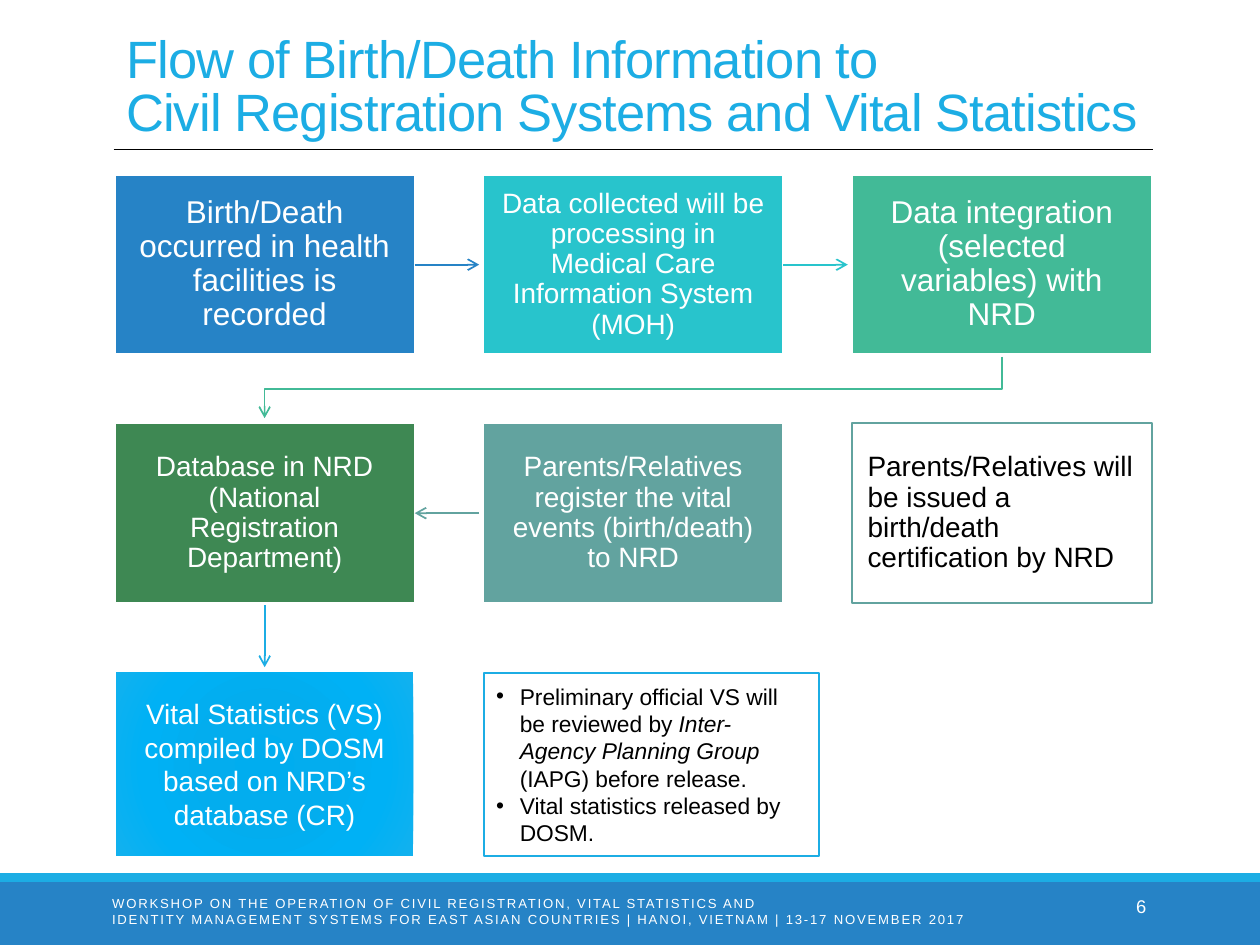
from dataclasses import dataclass
from itertools import pairwise

from lxml.etree import SubElement
from pptx import Presentation
from pptx.dml.color import RGBColor
from pptx.enum.shapes import MSO_CONNECTOR as Link, MSO_SHAPE as Shape
from pptx.enum.text import MSO_ANCHOR as Anchor, MSO_AUTO_SIZE as AutoSize, PP_ALIGN as Align
from pptx.oxml.ns import qn
from pptx.util import Cm, Pt


@dataclass(frozen=True)
class Theme:
    font: str = "Arial"
    white: str = "FFFFFF"
    black: str = "000000"
    sky: str = "1CADE4"
    blue: str = "2683C6"
    aqua: str = "28C4CC"
    mint: str = "42BA97"
    green: str = "3E8853"
    teal: str = "62A39F"
    glow: tuple = ((0, "00ADEF"), (34, "03ADEE"), (70, "00B1F5"), (100, "12B1EE"))
    title: float = 30
    large: float = 18
    body: float = 16
    note: float = 13
    number: float = 10.5
    footer: float = 7.5
    border: float = 1.25
    arrow: float = 1
    rule: float = 0.75


@dataclass(frozen=True)
class Box:
    """A rectangle in centimetres."""
    left: float
    top: float
    width: float
    height: float

    @property
    def right(self):
        return self.left + self.width

    @property
    def bottom(self):
        return self.top + self.height

    @property
    def center(self):
        return self.left + self.width / 2

    @property
    def middle(self):
        return self.top + self.height / 2

    def lengths(self):
        return [Cm(value) for value in (self.left, self.top, self.width, self.height)]


THEME = Theme()
GAP = 1.38
REACH = 1.3  # length of an arrow between neighbouring boxes


def rgb(color):
    return RGBColor.from_string(color)


def style(para, size, color, align=Align.LEFT, tracking=None, spacing=None):
    font = para.font
    font.name, font.size, font.color.rgb = THEME.font, Pt(size), rgb(color)
    para.alignment = align
    if spacing:
        para.line_spacing = spacing
    if tracking:
        para._p.pPr.find(qn("a:defRPr")).set("spc", str(int(tracking * 100)))


def add_panel(page, box, fill=None, line=None):
    panel = page.shapes.add_shape(Shape.RECTANGLE, *box.lengths())
    panel.shadow.inherit = False
    if fill:
        panel.fill.solid()
        panel.fill.fore_color.rgb = rgb(fill)
    else:
        panel.fill.background()
    if line:
        panel.line.color.rgb = rgb(line)
        panel.line.width = Pt(THEME.border)
    else:
        panel.line.fill.background()
    return panel


def fill_radial(panel, stops):
    panel.fill.gradient()
    gradient = panel._element.spPr.find(qn("a:gradFill"))
    for child in list(gradient):
        gradient.remove(child)
    stop_list = SubElement(gradient, qn("a:gsLst"))
    for percent, color in stops:
        stop = SubElement(stop_list, qn("a:gs"), pos=str(percent * 1000))
        SubElement(stop, qn("a:srgbClr"), val=color)
    circle = SubElement(gradient, qn("a:path"), path="circle")
    SubElement(circle, qn("a:fillToRect"), {side: "100000" for side in "ltrb"})


def write_in(panel, text, size, color, align=Align.CENTER, spacing=None, inset=None):
    frame = panel.text_frame
    frame.word_wrap, frame.vertical_anchor = True, Anchor.MIDDLE
    if inset:
        frame.margin_left = frame.margin_right = Cm(inset)
        frame.margin_top = frame.margin_bottom = Cm(inset)
    frame.text = text
    style(frame.paragraphs[0], size, color, align, spacing=spacing)


def add_line(page, start, end, color, width, arrow=False):
    points = [Cm(value) for value in (*start, *end)]
    line = page.shapes.add_connector(Link.STRAIGHT, *points)
    line.line.color.rgb, line.line.width = rgb(color), Pt(width)
    if arrow:
        SubElement(line.line._get_or_add_ln(), qn("a:tailEnd"), type="arrow")
    SubElement(line._element.spPr, qn("a:effectLst"))


def add_return_path(page, source, target, color):
    """Lead from below source round to the top of target."""
    turn = (source.bottom + target.top) / 2
    points = [(source.center, source.bottom + 0.04), (source.center, turn),
              (target.center, turn), (target.center, target.top - 0.1)]
    first, *rest = [(Cm(x), Cm(y)) for x, y in points]
    builder = page.shapes.build_freeform(*first)
    builder.add_line_segments(rest, close=False)
    bend = builder.convert_to_shape()
    bend.shadow.inherit = False
    bend.fill.background()
    bend.line.color.rgb, bend.line.width = rgb(color), Pt(THEME.arrow)
    SubElement(bend.line._get_or_add_ln(), qn("a:tailEnd"), type="arrow")


def add_heading(page, box):
    title = page.shapes.title
    title.left, title.top, title.width, title.height = box.lengths()
    frame = title.text_frame
    frame.word_wrap, frame.auto_size, frame.vertical_anchor = True, AutoSize.NONE, Anchor.BOTTOM
    frame.text = "Flow of Birth/Death Information to \vCivil Registration Systems and Vital Statistics"
    style(frame.paragraphs[0], THEME.title, THEME.sky, tracking=-0.5, spacing=0.85)
    add_line(page, (box.left, box.bottom + 0.02), (box.right, box.bottom + 0.02),
             THEME.black, THEME.rule)


def add_flow(page, area):
    """Place two rows of three steps, joined by arrows; return the last step."""
    width, height = (area.width - 2 * GAP) / 3, (area.height - GAP) / 2
    steps = [
        ("Birth/Death occurred in health facilities is recorded", THEME.blue, THEME.large),
        ("Data collected will be processing in Medical Care Information System (MOH)",
         THEME.aqua, THEME.body),
        ("Data integration (selected variables) with NRD", THEME.mint, THEME.large),
        ("Database in NRD (National Registration Department)", THEME.green, THEME.body),
        ("Parents/Relatives register the vital events (birth/death) to NRD",
         THEME.teal, THEME.body),
        ("Parents/Relatives will be issued a birth/death certification by NRD",
         None, THEME.body),
    ]
    boxes = []
    for index, (text, fill, size) in enumerate(steps):
        row, column = divmod(index, 3)
        box = Box(area.left + column * (width + GAP), area.top + row * (height + GAP),
                  width, height)
        panel = add_panel(page, box, fill, THEME.white if fill else THEME.teal)
        write_in(panel, text, size, THEME.white if fill else THEME.black,
                 Align.CENTER if fill else Align.LEFT, 0.9, size * 0.02)
        boxes.append(box)

    for (source, _), color in zip(pairwise(boxes[:3]), (THEME.blue, THEME.aqua)):
        add_line(page, (source.right, source.middle), (source.right + REACH, source.middle),
                 color, THEME.arrow, arrow=True)
    database = boxes[3]
    add_line(page, (database.right + REACH, database.middle),
             (database.right, database.middle), THEME.teal, THEME.arrow, arrow=True)
    add_return_path(page, boxes[2], database, THEME.mint)
    return database


def add_result(page, box, source):
    panel = add_panel(page, box, THEME.sky)
    fill_radial(panel, THEME.glow)
    write_in(panel, "Vital Statistics (VS) compiled by DOSM based on NRD’s database (CR)",
             THEME.body, THEME.white)
    add_line(page, (source.center, source.bottom + 0.04), (source.center, box.top - 0.1),
             THEME.sky, THEME.arrow, arrow=True)


def add_release_notes(page, box):
    frame = add_panel(page, box, THEME.white, THEME.sky).text_frame
    frame.word_wrap, frame.vertical_anchor = True, Anchor.MIDDLE
    notes = [
        [("Preliminary official VS will be reviewed by ", False),
         ("Inter-Agency Planning Group ", True), ("(IAPG) before release.", False)],
        [("Vital statistics released by DOSM.", False)],
    ]
    for index, spans in enumerate(notes):
        para = frame.add_paragraph() if index else frame.paragraphs[0]
        for text, italic in spans:
            span = para.add_run()
            span.text, span.font.italic = text, italic
        properties = para._p.get_or_add_pPr()
        properties.set("marL", str(Cm(0.48)))
        properties.set("indent", str(-Cm(0.48)))
        SubElement(properties, qn("a:buFont"), typeface=THEME.font)
        SubElement(properties, qn("a:buChar"), char="•")
        style(para, THEME.note, THEME.black)


def add_footer(page, box):
    stripe = 0.18
    add_panel(page, Box(box.left, box.top + stripe, box.width, box.height - stripe), THEME.blue)
    add_panel(page, Box(box.left, box.top, box.width, stripe), THEME.sky)
    event = ("WORKSHOP ON THE OPERATION OF CIVIL REGISTRATION, VITAL STATISTICS AND\n"
             "IDENTITY MANAGEMENT SYSTEMS FOR EAST ASIAN COUNTRIES"
             " | HANOI, VIETNAM | 13-17 NOVEMBER 2017")
    for text, left, width, size, align, tracking in (
            (event, 2.01, 17.86, THEME.footer, Align.LEFT, 1),
            ("6", 20.62, 2.74, THEME.number, Align.RIGHT, None)):
        place = Box(box.left + left, box.top + 0.33, width, 1.02)
        frame = page.shapes.add_textbox(*place.lengths()).text_frame
        frame.word_wrap = True
        frame.text = text
        for para in frame.paragraphs:
            style(para, size, THEME.white, align, tracking)


def main():
    deck = Presentation()
    deck.slide_width, deck.slide_height = Cm(25.4), Cm(19.05)
    page = deck.slides.add_slide(deck.slide_layouts[5])
    add_footer(page, Box(0, 17.6, 25.4, 1.45))
    add_heading(page, Box(2.29, 0.79, 20.95, 2.21))
    database = add_flow(page, Box(2.31, 3.52, 20.91, 8.64))
    add_result(page, Box(2.34, 13.55, 5.99, 3.7), database)
    add_release_notes(page, Box(9.75, 13.56, 6.76, 3.7))
    deck.save("out.pptx")


if __name__ == "__main__":
    main()
